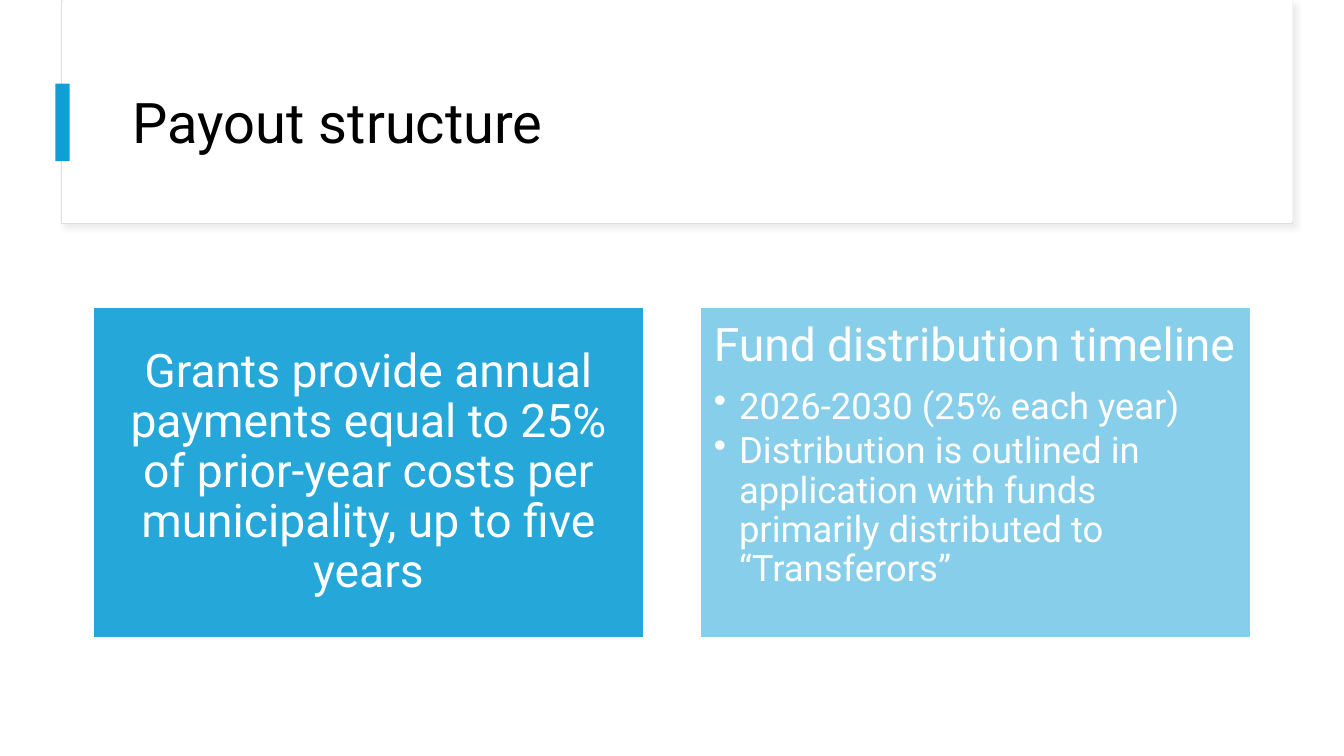
from dataclasses import dataclass

from lxml.etree import SubElement
from pptx import Presentation
from pptx.dml.color import RGBColor
from pptx.enum.shapes import MSO_SHAPE as SHAPE
from pptx.enum.text import MSO_ANCHOR as ANCHOR, PP_ALIGN as ALIGN
from pptx.oxml.ns import qn
from pptx.util import Inches, Pt


@dataclass(frozen=True)
class Theme:
    font: str = "Roboto"
    accent: str = "0F9ED5"
    white: str = "FFFFFF"
    black: str = "000000"
    border: str = "DEDEDE"
    shadow: str = "D9D9D9"
    title: int = 40
    heading: int = 33
    bullet: int = 26


THEME = Theme()
CARD_TOP, CARD_WIDTH, CARD_HEIGHT = 3.05, 5.47, 3.28
CARD_LEFT, CARD_STEP = 0.92, 6.02


def apply(target, values):
    for name, value in values.items():
        setattr(target, name, value)


def add_alpha(color, percent):
    SubElement(color, qn("a:alpha"), val=str(percent * 1000))


def add_rect(slide, box, fill, alpha=100, line=None, width=0.75):
    sp = slide.shapes.add_shape(SHAPE.RECTANGLE, *map(Inches, box))
    sp.shadow.inherit = False
    sp.fill.solid()
    sp.fill.fore_color.rgb = RGBColor.from_string(fill)
    if alpha < 100:
        add_alpha(sp.fill._xPr.find(".//" + qn("a:srgbClr")), alpha)
    if line:
        sp.line.color.rgb = RGBColor.from_string(line)
        sp.line.width = Pt(width)
    else:
        sp.line.fill.background()
    return sp


def add_shadow(sp):
    effects = sp._element.spPr.find(qn("a:effectLst"))
    shadow = SubElement(effects, qn("a:outerShdw"), blurRad=str(Pt(4)),
                        dist=str(Pt(3)), dir=str(45 * 60000), algn="tl", rotWithShape="0")
    add_alpha(SubElement(shadow, qn("a:srgbClr"), val=THEME.shadow), 50)


def set_frame(tf, anchor, inset):
    sides = ("left", "right", "top", "bottom")
    apply(tf, {"word_wrap": True, "vertical_anchor": anchor,
               **{f"margin_{side}": Inches(inset) for side in sides}})


def write(p, text, size, color=THEME.white, align=ALIGN.LEFT, after=0.0, bullet=False):
    if bullet:
        pPr = p._p.get_or_add_pPr()
        apply_indent = {"marL": Inches(0.25), "indent": Inches(-0.25)}
        for name, value in apply_indent.items():
            pPr.set(name, str(value))
        SubElement(pPr, qn("a:buChar"), char="•")
    apply(p, {"alignment": align, "line_spacing": 0.9, "space_after": Pt(size * after)})
    r = p.add_run()
    r.text = text
    apply(r.font, {"name": THEME.font, "size": Pt(size)})
    r.font.color.rgb = RGBColor.from_string(color)


def add_title(slide, text):
    tb = slide.shapes.add_textbox(*map(Inches, (1.22, 0.6, 11.12, 1.29)))
    set_frame(tb.text_frame, ANCHOR.MIDDLE, 0.1)
    write(tb.text_frame.paragraphs[0], text, THEME.title, THEME.black)


def add_card(slide, index, alpha, heading, bullets=()):
    box = (CARD_LEFT + index * CARD_STEP, CARD_TOP, CARD_WIDTH, CARD_HEIGHT)
    sp = add_rect(slide, box, THEME.accent, alpha, THEME.white, 1.5)
    tf = sp.text_frame
    set_frame(tf, ANCHOR.TOP if bullets else ANCHOR.MIDDLE, 0.14)
    align = ALIGN.LEFT if bullets else ALIGN.CENTER
    write(tf.paragraphs[0], heading, THEME.heading, align=align, after=0.35)
    for text in bullets:
        write(tf.add_paragraph(), text, THEME.bullet, after=0.15, bullet=True)


def main():
    prs = Presentation()
    apply(prs, {"slide_width": Inches(13.33), "slide_height": Inches(7.5)})
    s = prs.slides.add_slide(prs.slide_layouts[6])
    add_shadow(add_rect(s, (0.61, 0.01, 12.21, 2.21), THEME.white, line=THEME.border))
    add_rect(s, (0.62, 0, 12.2, 2.2), THEME.white)
    add_title(s, "Payout structure")
    add_rect(s, (0.55, 0.83, 0.14, 0.77), THEME.accent)
    add_card(s, 0, 90, "Grants provide annual payments equal to 25% of prior-year "
                       "costs per municipality, up to five years")
    add_card(s, 1, 50, "Fund distribution timeline", (
        "2026-2030 (25% each year)",
        "Distribution is outlined in application with funds primarily "
        "distributed to “Transferors”",
    ))
    prs.save("out.pptx")


if __name__ == "__main__":
    main()
